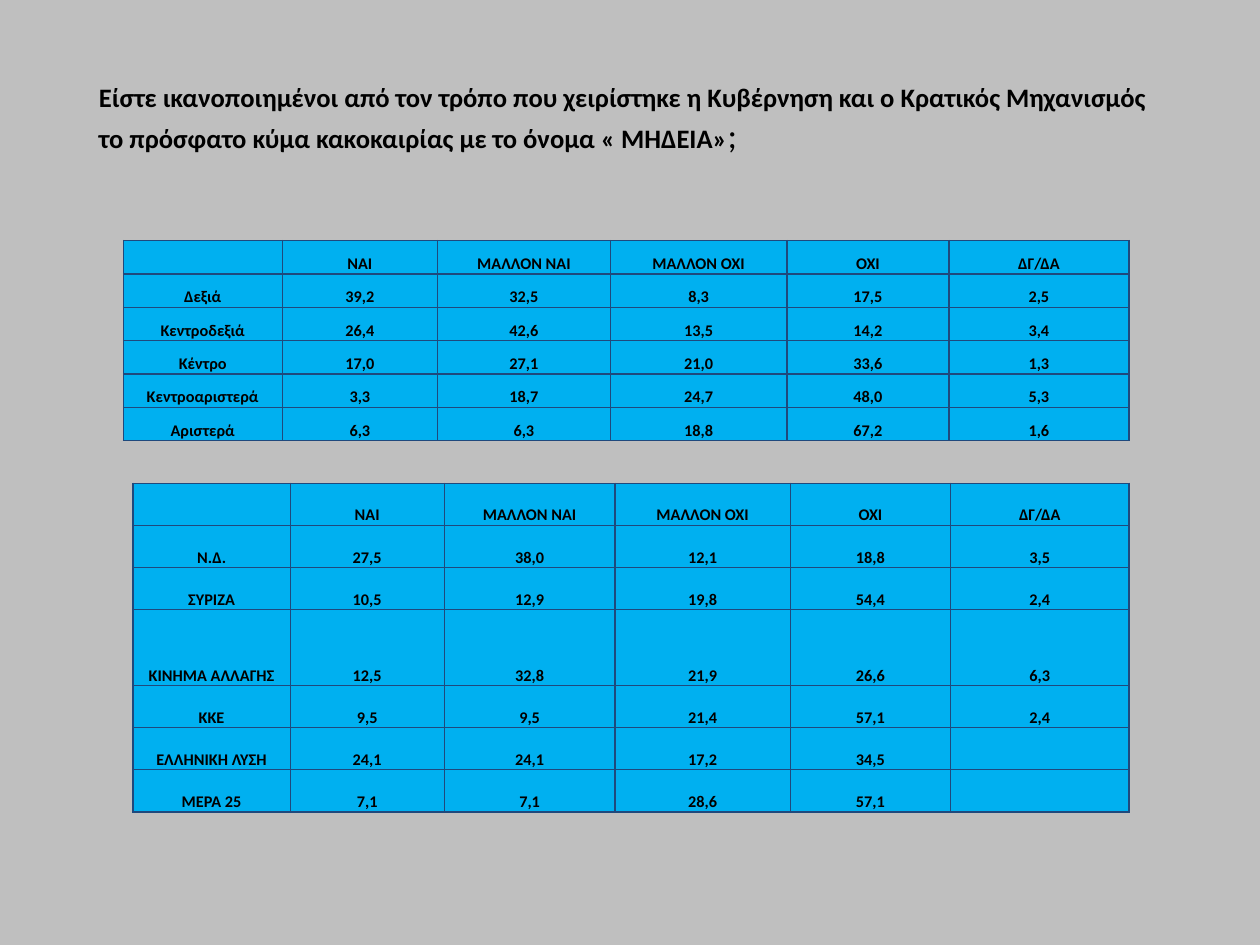
from lxml import etree
from pptx import Presentation
from pptx import util as u
from pptx.dml.color import RGBColor
from pptx.enum import text
from pptx.oxml.ns import qn

WIDTH, HEIGHT = 11.84, 8.88
GREY, SKY, NAVY, BLACK = "BFBFBF", "00B0F0", "1F497D", "000000"
FONT = "Calibri"

TITLE = [
    ("Είστε ικανοποιημένοι από τον τρόπο που χειρίστηκε η Κυβέρνηση και ο "
     "Κρατικός Μηχανισμός το πρόσφατο κύμα κακοκαιρίας με το όνομα « ΜΗΔΕΙΑ»", 18, True),
    (";", 24, False),
]
HEAD = ("", "ΝΑΙ", "ΜΑΛΛΟΝ ΝΑΙ", "ΜΑΛΛΟΝ ΟΧΙ", "ΟΧΙ", "ΔΓ/ΔΑ")
LEANING = [
    HEAD,
    ("Δεξιά", "39,2", "32,5", "8,3", "17,5", "2,5"),
    ("Κεντροδεξιά", "26,4", "42,6", "13,5", "14,2", "3,4"),
    ("Κέντρο", "17,0", "27,1", "21,0", "33,6", "1,3"),
    ("Κεντροαριστερά", "3,3", "18,7", "24,7", "48,0", "5,3"),
    ("Αριστερά", "6,3", "6,3", "18,8", "67,2", "1,6"),
]
PARTY = [
    HEAD,
    ("Ν.Δ.", "27,5", "38,0", "12,1", "18,8", "3,5"),
    ("ΣΥΡΙΖΑ", "10,5", "12,9", "19,8", "54,4", "2,4"),
    ("ΚΙΝΗΜΑ ΑΛΛΑΓΗΣ", "12,5", "32,8", "21,9", "26,6", "6,3"),
    ("ΚΚΕ", "9,5", "9,5", "21,4", "57,1", "2,4"),
    ("ΕΛΛΗΝΙΚΗ ΛΥΣΗ", "24,1", "24,1", "17,2", "34,5", ""),
    ("ΜΕΡΑ 25", "7,1", "7,1", "28,6", "57,1", ""),
]
COLS = (149, 146, 162, 166, 152, 169)  # relative widths, shared by both tables
# rows, left, top, width, height, relative row heights
TABLES = [
    (LEANING, 1.16, 2.26, 9.45, 1.88, (1,) * 6),
    (PARTY, 1.25, 4.54, 9.36, 3.09, (5, 5, 5, 9, 5, 5, 5)),
]


def paint(color, value):
    color.rgb = RGBColor.from_string(value)


def write(para, words, size, bold):
    run = para.add_run()
    run.text = words
    run.font.name, run.font.size, run.font.bold = FONT, u.Pt(size), bold
    paint(run.font.color, BLACK)


def border(cell):
    props = cell._tc.get_or_add_tcPr()
    for place, side in enumerate(("lnL", "lnR", "lnT", "lnB")):
        line = etree.Element(qn("a:" + side), w=str(u.Pt(1)))
        fill = etree.SubElement(line, qn("a:solidFill"))
        etree.SubElement(fill, qn("a:srgbClr"), val=NAVY)
        props.insert(place, line)


def style(cell, words):
    cell.fill.solid()
    paint(cell.fill.fore_color, SKY)
    border(cell)
    cell.vertical_anchor = text.MSO_ANCHOR.BOTTOM
    cell.margin_left = cell.margin_right = cell.margin_top = u.Inches(0.01)
    cell.margin_bottom = 0
    para = cell.text_frame.paragraphs[0]
    para.alignment = text.PP_ALIGN.CENTER
    if words:
        write(para, words, 11, True)


def share(total, parts):
    """Split a length in proportion to the parts."""
    return [u.Inches(total * part / sum(parts)) for part in parts]


def add_grid(slide, rows, left, top, width, height, parts):
    box = [u.Inches(v) for v in (left, top, width, height)]
    grid = slide.shapes.add_table(len(rows), len(COLS), *box).table
    for col, size in zip(grid.columns, share(width, COLS)):
        col.width = size
    for row, size, words in zip(grid.rows, share(height, parts), rows):
        row.height = size
        for cell, word in zip(row.cells, words):
            style(cell, word)


def add_title(slide):
    title = slide.shapes.title
    title.left, title.top = u.Inches(0.81), u.Inches(0.47)
    title.width, title.height = u.Inches(10.21), u.Inches(1.28)
    frame = title.text_frame
    frame.word_wrap = True
    frame.auto_size = text.MSO_AUTO_SIZE.NONE
    frame.vertical_anchor = text.MSO_ANCHOR.MIDDLE
    frame.margin_left = frame.margin_right = u.Inches(0.12)
    frame.margin_top = frame.margin_bottom = u.Inches(0.06)
    para = frame.paragraphs[0]
    para.alignment = text.PP_ALIGN.LEFT
    for words, size, bold in TITLE:
        write(para, words, size, bold)


def main():
    deck = Presentation()
    deck.slide_width, deck.slide_height = u.Inches(WIDTH), u.Inches(HEIGHT)
    slide = deck.slides.add_slide(deck.slide_layouts[5])
    slide.background.fill.solid()
    paint(slide.background.fill.fore_color, GREY)
    add_title(slide)
    for table in TABLES:
        add_grid(slide, *table)
    deck.save("out.pptx")


if __name__ == "__main__":
    main()
